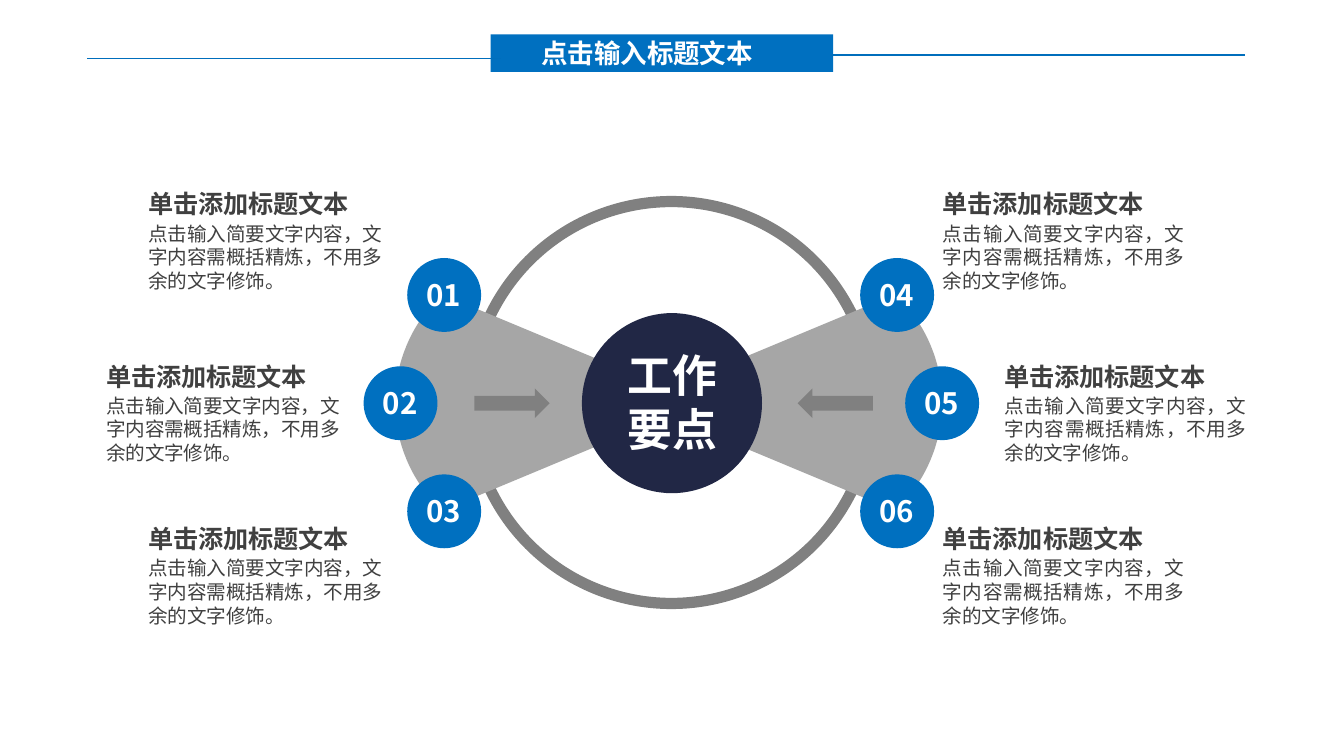
from dataclasses import dataclass
from math import cos, radians, sin

from lxml.etree import SubElement
from pptx import Presentation
from pptx.dml.color import RGBColor as Rgb
from pptx.enum.shapes import MSO_CONNECTOR as Link, MSO_SHAPE as Kind
from pptx.enum.text import MSO_AUTO_SIZE as Fit, PP_ALIGN as Align
from pptx.oxml.ns import qn
from pptx.util import Pt

PX = 4572


@dataclass(frozen=True)
class Theme:
    """Colours, font and type sizes of the slide."""
    blue: str = "0070C0"
    rule: str = "006EBC"
    navy: str = "212745"
    gray: str = "808080"
    pale: str = "A6A6A6"
    ink: str = "404040"
    white: str = "FFFFFF"
    font: str = "Noto Sans CJK SC"
    title: float = 14.2
    hub: float = 24
    num: float = 15.8
    head: float = 13.5
    body: float = 10.5
    lead: float = 1.2


class Deck:
    """Draws styled elements on the current slide."""

    def __init__(self, theme, wide, high):
        self.theme = theme
        self.show = Presentation()
        self.show.slide_width = wide * PX
        self.show.slide_height = high * PX
        self.slide = self.show.slides.add_slide(self.show.slide_layouts[6])
        self.shapes = self.slide.shapes

    def paint(self, shape, fill):
        shape.shadow.inherit = False
        shape.fill.solid()
        shape.fill.fore_color.rgb = Rgb.from_string(fill)
        shape.line.fill.background()

    def block(self, kind, box, fill):
        shape = self.shapes.add_shape(kind, *(n * PX for n in box))
        self.paint(shape, fill)

    def ring(self, box, color, width):
        shape = self.shapes.add_shape(Kind.OVAL, *(n * PX for n in box))
        shape.shadow.inherit = False
        shape.fill.background()
        shape.line.color.rgb = Rgb.from_string(color)
        shape.line.width = Pt(width)

    def wedge(self, tip, mid, y, radius, half, side, fill):
        arc = [(mid + side * radius * cos(radians(a)), y + radius * sin(radians(a)))
               for a in range(-half, half + 1, 2)]
        pen = self.shapes.build_freeform(tip * PX, y * PX)
        pen.add_line_segments([(round(x * PX), round(v * PX)) for x, v in arc])
        self.paint(pen.convert_to_shape(), fill)

    def text(self, words, box, size, color, bold=True, align=None, pad=(20, 10), wrap=True):
        shape = self.shapes.add_textbox(*(n * PX for n in box))
        frame = shape.text_frame
        frame.text = words
        frame.word_wrap = wrap
        frame.auto_size = Fit.SHAPE_TO_FIT_TEXT
        frame.margin_left = frame.margin_right = pad[0] * PX
        frame.margin_top = frame.margin_bottom = pad[1] * PX
        para = frame.paragraphs[0]
        para.alignment = align
        para.line_spacing = Pt(size * self.theme.lead)
        font = para.runs[0].font
        font.size = Pt(size)
        font.bold = bold
        font.color.rgb = Rgb.from_string(color)
        font.name = self.theme.font
        props = para.runs[0]._r.get_or_add_rPr()
        SubElement(props, qn("a:ea")).set("typeface", self.theme.font)

    def line(self, start, end, color, width):
        link = self.shapes.add_connector(Link.STRAIGHT, *(n * PX for n in start + end))
        link.line.color.rgb = Rgb.from_string(color)
        link.line.width = Pt(width)
        SubElement(link._element.spPr, qn("a:effectLst"))

    def dot(self, label, x, y):
        self.block(Kind.OVAL, (x, y, 110, 110), self.theme.blue)
        self.text(label, (x + 9, y + 18, 96, 74), self.theme.num, self.theme.white, wrap=False)

    def note(self, head, body, x, top, low, wide, align):
        look = self.theme
        self.text(head, (x, top, 354, 46), look.head, look.ink, pad=(0, 0))
        self.text(body, (x, low, wide, 106), look.body, look.ink, False, align, (0, 0))


def main():
    """Build the slide and save it."""
    look = Theme()
    deck = Deck(look, 2000, 1125)
    head = "单击添加标题文本"
    body = "点击输入简要文字内容，文字内容需概括精炼，不用多余的文字修饰。"

    deck.ring((700, 300, 598, 598), look.gray, 6)
    deck.wedge(946, 1182, 599, 220, 47, 1, look.pale)
    deck.wedge(1044, 808, 599, 220, 47, -1, look.pale)

    sides = (
        (1, (606, 541, 606), (221, 158, 221), 354, None),
        (4, (1280, 1347, 1280), (1403, 1495, 1403), 360, Align.JUSTIFY),
    )
    for first, dots, notes, wide, align in sides:
        rows = zip(dots, (384, 545, 706), notes, (280, 538, 778), (330, 586, 828))
        for num, (x, y, left, top, low) in enumerate(rows, first):
            deck.dot(f"{num:02}", x, y)
            deck.note(head, body, left, top, low, wide, align)

    deck.block(Kind.OVAL, (866, 466, 268, 268), look.navy)
    deck.text("工作要点", (896, 508, 210, 182), look.hub, look.white, align=Align.CENTER)
    deck.block(Kind.RIGHT_ARROW, (706, 578, 112, 44), look.gray)
    deck.block(Kind.LEFT_ARROW, (1187, 578, 112, 44), look.gray)

    deck.block(Kind.RECTANGLE, (730, 51, 510, 56), look.blue)
    deck.text("点击输入标题文本", (786, 46, 372, 68), look.title, look.white)
    deck.line((130, 87), (746, 87), look.rule, 0.75)
    deck.line((1236, 82), (1852, 82), look.rule, 0.75)
    deck.show.save("out.pptx")


if __name__ == "__main__":
    main()
